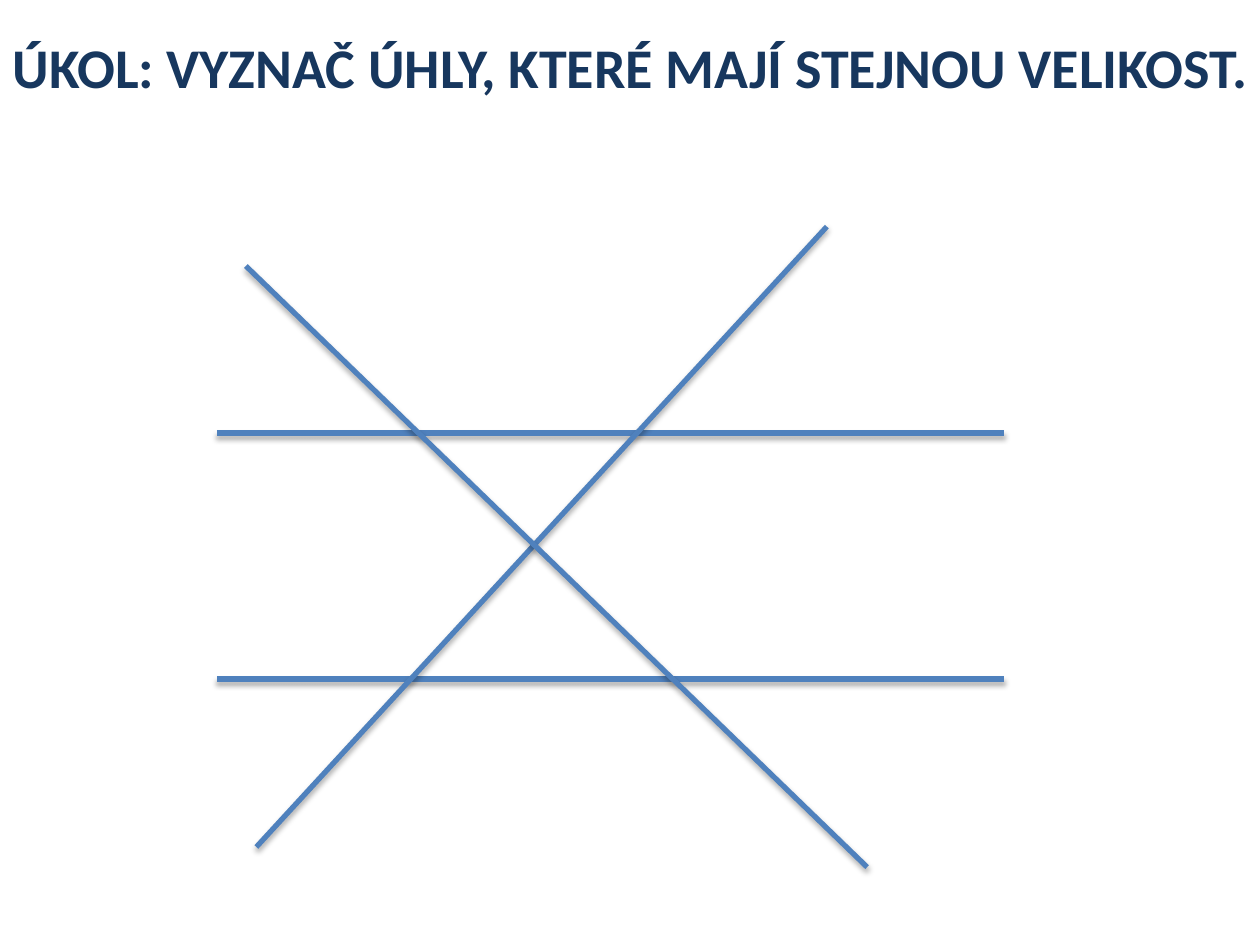
"""Build a slide with two parallel lines cut by two crossing lines."""
from lxml import etree
from pptx import Presentation
from pptx.dml.color import RGBColor
from pptx.enum import shapes, text
from pptx.oxml import ns
from pptx.util import Pt


def color(value):
    """Turn a hex string into a colour."""
    return RGBColor.from_string(value)


def write_text(frame, content, *, font, size, fill, bold=False, align=text.PP_ALIGN.LEFT):
    """Put formatted text into the first paragraph of a text frame."""
    paragraph = frame.paragraphs[0]
    paragraph.alignment = align
    run = paragraph.add_run()
    run.text = content
    run.font.name = font
    run.font.size = Pt(size)
    run.font.bold = bold
    run.font.color.rgb = color(fill)


def add_shadow(connector, blur, distance, opacity):
    """Give a connector a soft black shadow that falls straight down."""
    effects = etree.SubElement(connector._element.spPr, ns.qn("a:effectLst"))
    shadow = etree.SubElement(effects, ns.qn("a:outerShdw"), {
        "blurRad": str(Pt(blur)), "dist": str(Pt(distance)),
        "dir": str(90 * 60000), "rotWithShape": "0"})
    black = etree.SubElement(shadow, ns.qn("a:srgbClr"), val="000000")
    etree.SubElement(black, ns.qn("a:alpha"), val=str(opacity * 1000))


def add_title(slide, content, left, top, width, height):
    """Place the task in the title placeholder."""
    title = slide.shapes.title
    title.left, title.top = Pt(left), Pt(top)
    title.width, title.height = Pt(width), Pt(height)
    frame = title.text_frame
    frame.word_wrap = False
    frame.auto_size = text.MSO_AUTO_SIZE.SHAPE_TO_FIT_TEXT
    frame.vertical_anchor = text.MSO_ANCHOR.TOP
    write_text(frame, content, font="Calibri", size=32, fill="17375E", bold=True)


def add_line(slide, start, end):
    """Draw one straight line with its shadow."""
    line = slide.shapes.add_connector(
        shapes.MSO_CONNECTOR.STRAIGHT, *map(Pt, (*start, *end)))
    line.line.color.rgb = color("4F81BD")
    line.line.width = Pt(3)
    add_shadow(line, blur=3.1, distance=1.8, opacity=35)


def add_angle_figure(slide, left, top, width, height):
    """Draw two parallels and two transversals inside a box."""
    for offset in (118, 258.5):
        add_line(slide, (left, top + offset), (left + width, top + offset))
    add_line(slide, (left + 22.5, top + height - 11.5), (left + 348.5, top))
    add_line(slide, (left + 16.5, top + 22.5), (left + 371.5, top + height))


def main():
    """Build and save the presentation."""
    presentation = Presentation()
    presentation.slide_width, presentation.slide_height = Pt(720), Pt(540)
    slide = presentation.slides.add_slide(presentation.slide_layouts.get_by_name("Title Only"))
    add_angle_figure(slide, 124, 129.5, 450, 366)
    add_title(slide, "ÚKOL: VYZNAČ ÚHLY, KTERÉ MAJÍ STEJNOU VELIKOST.", 0, 15, 727, 46)
    presentation.save("out.pptx")


if __name__ == "__main__":
    main()
